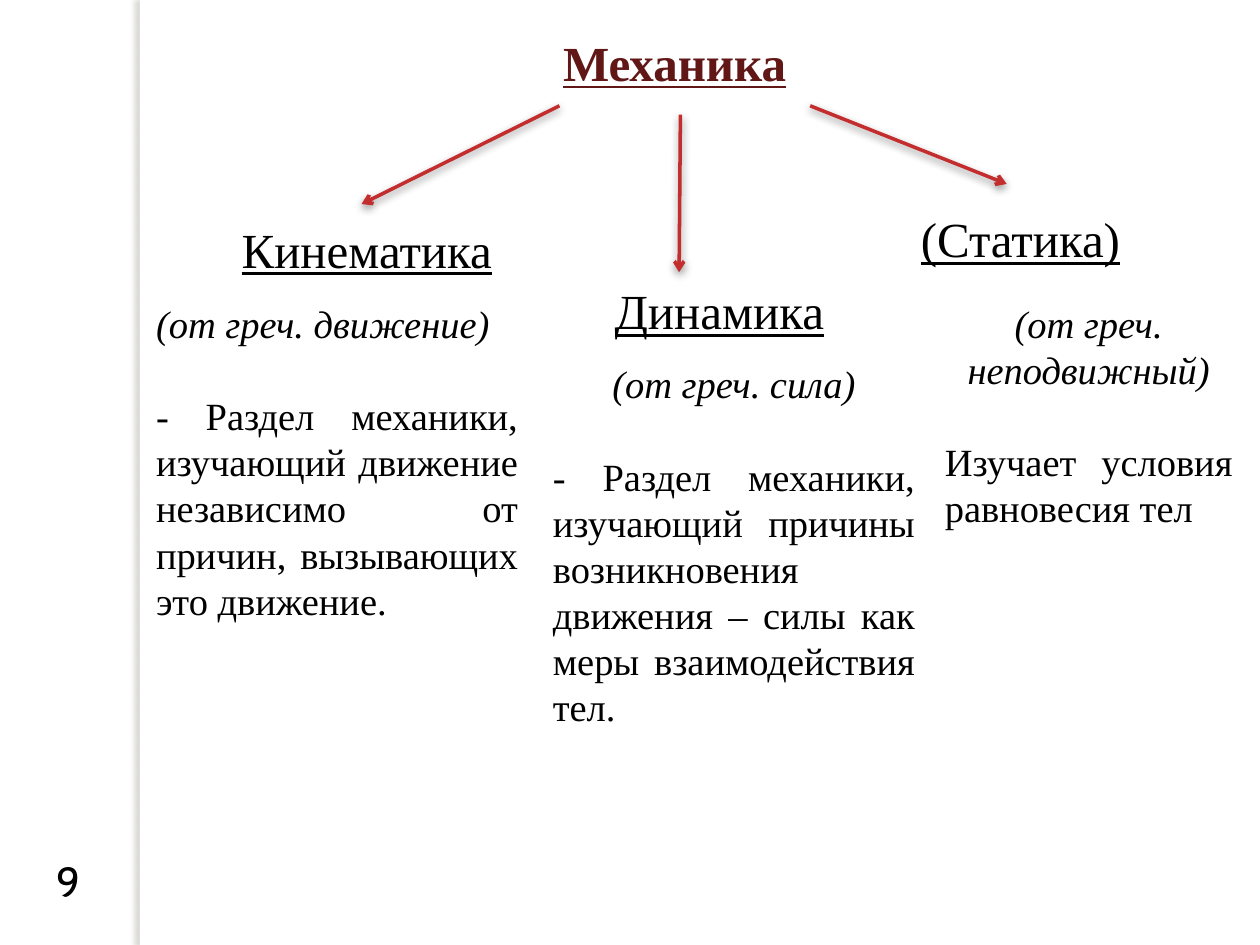
"""Build a slide that divides mechanics into its three branches."""
from dataclasses import dataclass

from lxml import etree
from pptx import Presentation
from pptx.dml.color import RGBColor
from pptx.enum.shapes import MSO_CONNECTOR, MSO_SHAPE
from pptx.enum.text import MSO_ANCHOR, MSO_AUTO_SIZE, PP_ALIGN
from pptx.oxml.ns import qn
from pptx.util import Inches, Pt

STRAIGHT = MSO_CONNECTOR.STRAIGHT
RECTANGLE = MSO_SHAPE.RECTANGLE
TOP = MSO_ANCHOR.TOP
GROW = MSO_AUTO_SIZE.SHAPE_TO_FIT_TEXT
LEFT, CENTER, JUSTIFY = PP_ALIGN.LEFT, PP_ALIGN.CENTER, PP_ALIGN.JUSTIFY

WHITE = RGBColor(0xFF, 0xFF, 0xFF)
BLACK = RGBColor(0, 0, 0)
MAROON = RGBColor(0x62, 0x17, 0x17)
RED = RGBColor(0xC3, 0x2D, 0x2E)
GRAY = RGBColor(0x73, 0x6F, 0x63)

SERIF = "Times New Roman"
HEADING_SIZE = 28
BODY_SIZE = 22
LEADING = 1.2


@dataclass(frozen=True)
class Area:
    left: float
    top: float
    width: float
    height: float

    def lengths(self) -> tuple:
        return tuple(Inches(n) for n in (self.left, self.top, self.width, self.height))


@dataclass(frozen=True)
class Shadow:
    color: RGBColor
    opacity: int
    blur: int
    distance: int
    angle: int


@dataclass(frozen=True)
class Branch:
    name: str
    origin: str
    meaning: str
    heading_area: Area
    body_area: Area
    origin_align: PP_ALIGN
    arrow: tuple[float, float, float, float]


EDGE_SHADOW = Shadow(GRAY, 25, 3, 3, 180)
ARROW_SHADOW = Shadow(BLACK, 43, 5, 2, 90)

BRANCHES = [
    Branch("Кинематика", "(от греч. движение)",
           "- Раздел механики, изучающий движение независимо от причин, "
           "вызывающих это движение.",
           Area(1.82, 1.69, 2.26, 0.57), Area(1.14, 2.33, 3.07, 2.69),
           LEFT, (4.44, 0.84, 2.87, 1.62)),
    Branch("Динамика", "(от греч. сила)",
           "- Раздел механики, изучающий причины возникновения движения – "
           "силы как меры взаимодействия тел.",
           Area(4.78, 2.18, 1.95, 0.57), Area(4.29, 2.81, 3.07, 3.06),
           CENTER, (5.4, 0.91, 5.39, 2.16)),
    Branch("(Статика)", "(от греч. неподвижный)",
           "Изучает условия равновесия тел",
           Area(7.21, 1.61, 1.8, 0.57), Area(7.4, 2.33, 2.48, 1.95),
           CENTER, (6.43, 0.84, 7.99, 1.46)),
]


def add_shadow(shape, shadow: Shadow) -> None:
    effects = etree.SubElement(shape._element.spPr, qn("a:effectLst"))
    outer = etree.SubElement(
        effects, qn("a:outerShdw"), blurRad=str(Pt(shadow.blur)),
        dist=str(Pt(shadow.distance)), dir=str(shadow.angle * 60000),
        algn="ctr", rotWithShape="0")
    color = etree.SubElement(outer, qn("a:srgbClr"), val=str(shadow.color))
    etree.SubElement(color, qn("a:alpha"), val=str(shadow.opacity * 1000))


def add_edge(page) -> None:
    edge = page.shapes.add_shape(RECTANGLE, *Area(1.11, 0, 0.08, 7.5).lengths())
    edge.fill.solid()
    edge.fill.fore_color.rgb = WHITE
    edge.line.fill.background()
    add_shadow(edge, EDGE_SHADOW)


def add_arrow(page, ends: tuple[float, float, float, float]) -> None:
    arrow = page.shapes.add_connector(STRAIGHT, *(Inches(n) for n in ends))
    arrow.line.color.rgb = RED
    arrow.line.width = Pt(2)
    etree.SubElement(arrow.line._get_or_add_ln(), qn("a:tailEnd"), type="arrow")
    add_shadow(arrow, ARROW_SHADOW)


def style_paragraph(para, text: str, size: int, align: PP_ALIGN = LEFT,
                    color: RGBColor = BLACK) -> None:
    para.text = text
    para.alignment = align
    para.line_spacing = Pt(size * LEADING)
    para.font.name = SERIF
    para.font.size = Pt(size)
    para.font.color.rgb = color


def fit_frame(box, wrap: bool):
    frame = box.text_frame
    frame.word_wrap = wrap
    frame.auto_size = GROW
    frame.vertical_anchor = TOP
    return frame


def fill_heading(box, text: str, color: RGBColor = BLACK, bold: bool = False) -> None:
    para = fit_frame(box, wrap=False).paragraphs[0]
    style_paragraph(para, text, HEADING_SIZE, color=color)
    para.font.underline = True
    para.font.bold = bold


def add_title(page) -> None:
    title = page.shapes.title
    title.left, title.top, title.width, title.height = Area(
        4.37, 0.21, 1.99, 0.57).lengths()
    fill_heading(title, "Механика", MAROON, bold=True)


def add_number(page) -> None:
    box = page.shapes.add_textbox(*Area(0.35, 6.74, 0.38, 0.5).lengths())
    para = fit_frame(box, wrap=False).paragraphs[0]
    para.text = "9"
    para.font.name = "Cabin"
    para.font.size = Pt(24)
    para.font.color.rgb = BLACK


def add_branch(page, branch: Branch) -> None:
    add_arrow(page, branch.arrow)
    fill_heading(page.shapes.add_textbox(*branch.heading_area.lengths()), branch.name)
    body = page.shapes.add_textbox(*branch.body_area.lengths())
    frame = fit_frame(body, wrap=True)
    origin = frame.paragraphs[0]
    style_paragraph(origin, branch.origin, BODY_SIZE, branch.origin_align)
    origin.font.italic = True
    origin.space_after = Pt(BODY_SIZE * LEADING)
    style_paragraph(frame.add_paragraph(), branch.meaning, BODY_SIZE, JUSTIFY)


def main() -> None:
    deck = Presentation()
    deck.slide_width, deck.slide_height = Inches(10), Inches(7.5)
    page = deck.slides.add_slide(deck.slide_layouts[5])
    add_edge(page)
    add_number(page)
    add_title(page)
    for branch in BRANCHES:
        add_branch(page, branch)
    deck.save("out.pptx")


if __name__ == "__main__":
    main()
